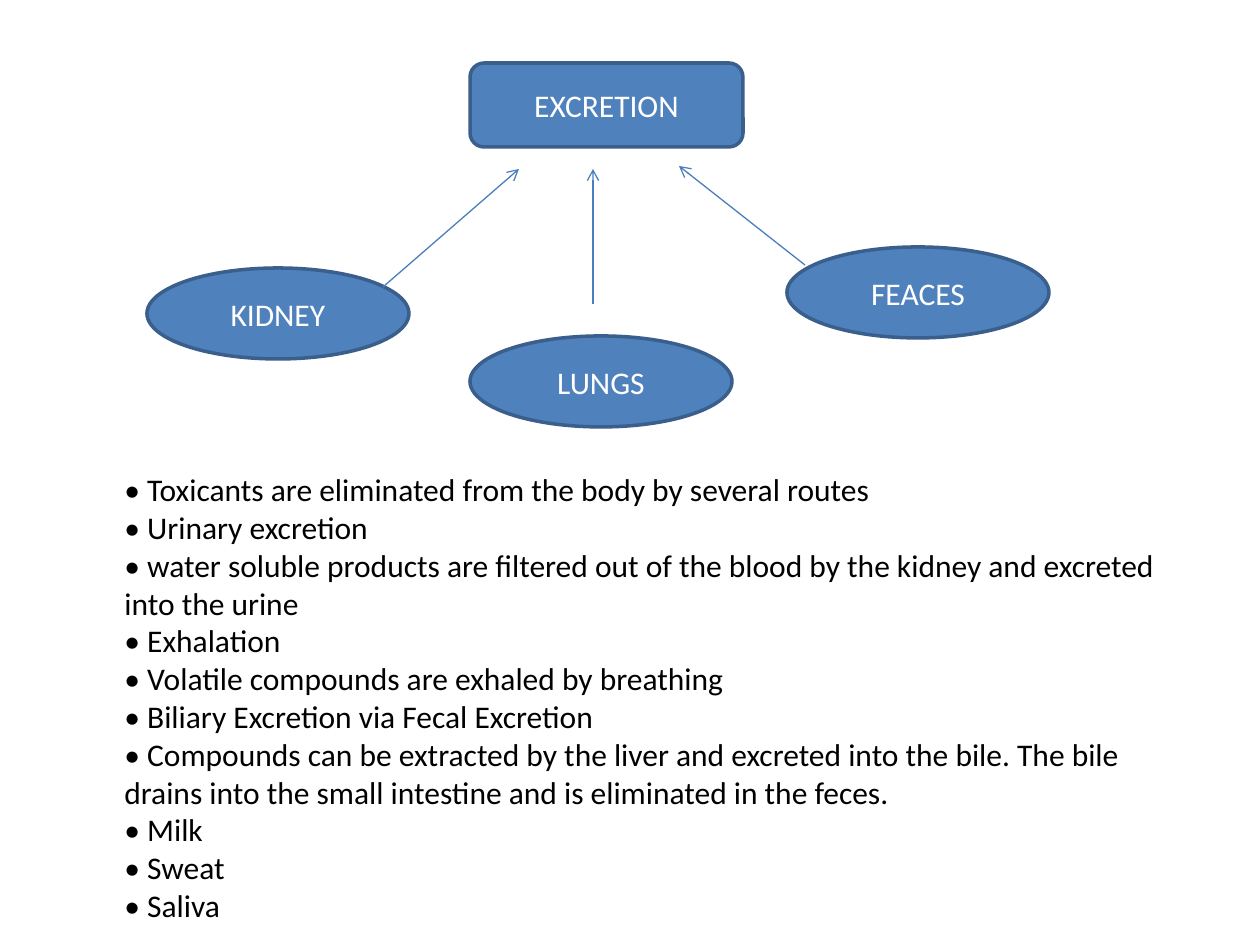
"""Build the slide on the routes by which toxicants are excreted."""
from lxml import etree
from pptx import Presentation
from pptx import util as u
from pptx.dml.color import RGBColor
from pptx.enum import shapes, text
from pptx.oxml.ns import qn

COLORS = {"fill": "4F81BD", "border": "3A5F8C", "arrow": "4B7EBC",
          "light": "FFFFFF", "dark": "000000"}
FONT = "Calibri"
OVAL_SIZE = (262, 91)
OVALS = [("KIDNEY", 147, 268), ("FEACES", 787, 247), ("LUNGS", 470, 336)]
ARROWS = [(383, 287, 519, 169), (593, 304, 593, 169), (805, 265, 679, 166)]
ROUTES = [
    "Toxicants are eliminated from the body by several routes",
    "Urinary excretion",
    "water soluble products are filtered out of the blood by the kidney and excreted into the urine",
    "Exhalation",
    "Volatile compounds are exhaled by breathing",
    "Biliary Excretion via Fecal Excretion",
    "Compounds can be extracted by the liver and excreted into the bile. "
    "The bile drains into the small intestine and is eliminated in the feces.",
    "Milk",
    "Sweat",
    "Saliva",
]


def px(n):
    return u.Emu(round(n * 914400 / 126))


def rgb(name):
    return RGBColor.from_string(COLORS[name])


def add_run(p, words, color):
    r = p.add_run()
    r.text = words
    r.font.name, r.font.size = FONT, u.Pt(18)
    r.font.color.rgb = rgb(color)


def add_node(s, kind, words, x, y, w, h):
    sp = s.shapes.add_shape(kind, px(x), px(y), px(w), px(h))
    sp.shadow.inherit = False
    sp.fill.solid()
    sp.fill.fore_color.rgb = rgb("fill")
    sp.line.color.rgb = rgb("border")
    sp.line.width = u.Pt(2)
    tf = sp.text_frame
    tf.vertical_anchor = text.MSO_ANCHOR.MIDDLE
    p = tf.paragraphs[0]
    p.alignment = text.PP_ALIGN.CENTER
    add_run(p, words, "light")


def add_arrow(s, x1, y1, x2, y2):
    sp = s.shapes.add_connector(shapes.MSO_CONNECTOR.STRAIGHT,
                                px(x1), px(y1), px(x2), px(y2))
    sp.line.color.rgb = rgb("arrow")
    sp.line.width = u.Pt(0.75)
    ln = sp.line._get_or_add_ln()
    etree.SubElement(ln, qn("a:tailEnd"), type="arrow")
    etree.SubElement(sp._element.spPr, qn("a:effectLst"))


def add_bullets(s, items, x, y, w, h):
    tf = s.shapes.add_textbox(px(x), px(y), px(w), px(h)).text_frame
    tf.word_wrap = True
    tf.auto_size = text.MSO_AUTO_SIZE.SHAPE_TO_FIT_TEXT
    for i, item in enumerate(items):
        p = tf.add_paragraph() if i else tf.paragraphs[0]
        add_run(p, f"• {item}", "dark")


def main():
    prs = Presentation()
    prs.slide_width, prs.slide_height = px(1260), px(945)
    s = prs.slides.add_slide(prs.slide_layouts[6])
    add_bullets(s, ROUTES, 112, 464, 1095, 471)
    add_node(s, shapes.MSO_SHAPE.ROUNDED_RECTANGLE, "EXCRETION", 470, 63, 273, 84)
    for words, x, y in OVALS:
        add_node(s, shapes.MSO_SHAPE.OVAL, words, x, y, *OVAL_SIZE)
    for ends in ARROWS:
        add_arrow(s, *ends)
    prs.save("out.pptx")


if __name__ == "__main__":
    main()
